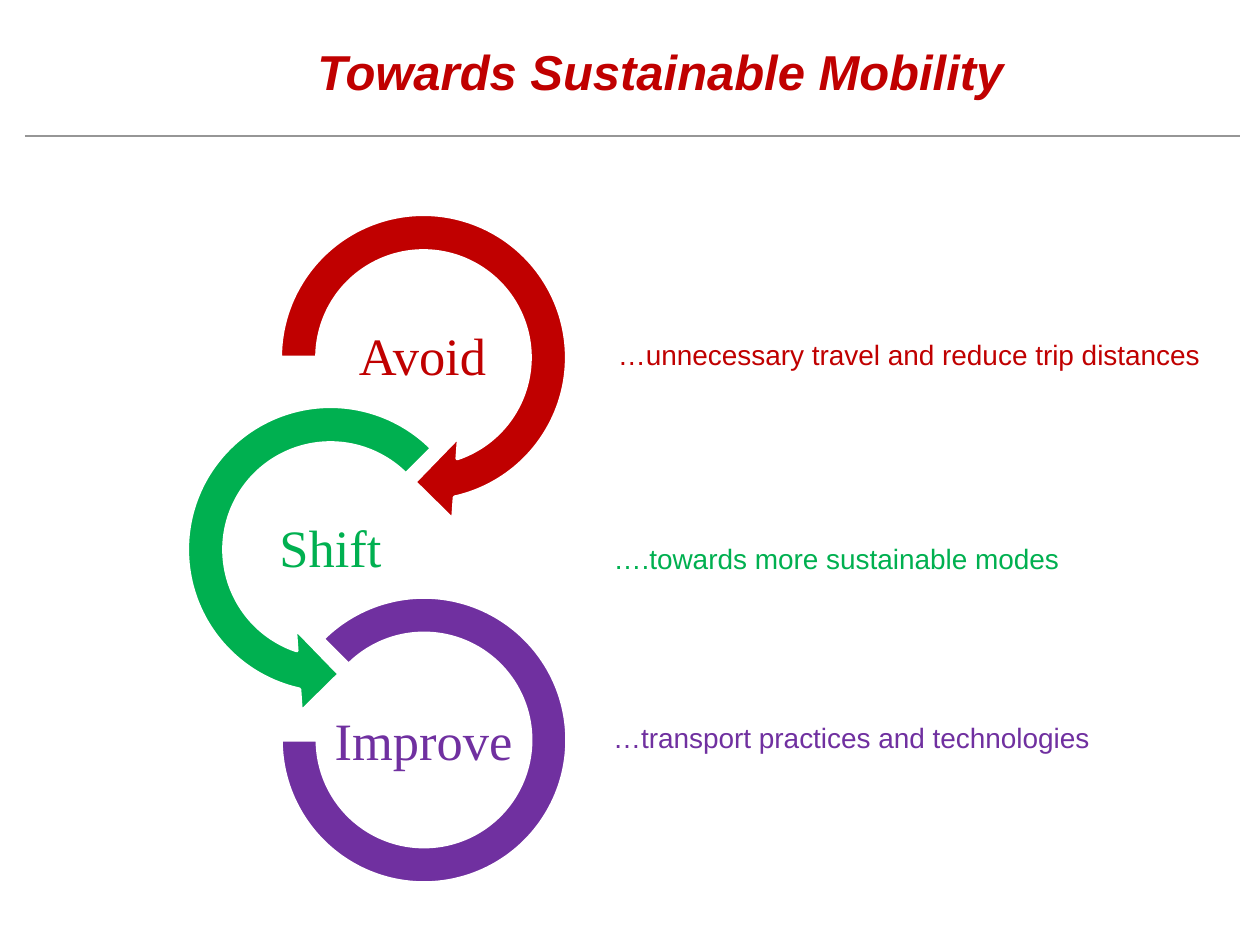
import pptx
import pptx.util
import pptx.dml.color
import pptx.enum.shapes
import pptx.enum.text
import pptx.oxml.ns
import lxml.etree

PX = 914400 / 126
SHAPE = pptx.enum.shapes.MSO_SHAPE
ALIGN = pptx.enum.text.PP_ALIGN
ANCHOR = pptx.enum.text.MSO_ANCHOR
RED, GREEN, VIOLET, WHITE = "C00000", "00B050", "7030A0", "FFFFFF"


def emu(*px):
    return [pptx.util.Emu(round(n * PX)) for n in px]


def color(code):
    return pptx.dml.color.RGBColor.from_string(code)


class Page:
    sans = "Arial"
    serif = "Times New Roman"

    def __init__(self, deck):
        self.slide = deck.slides.add_slide(deck.slide_layouts[6])
        self.shapes = self.slide.shapes

    def rule(self, left, right, y, code):
        line = self.shapes.add_connector(
            pptx.enum.shapes.MSO_CONNECTOR.STRAIGHT, *emu(left, y, right, y))
        line.line.color.rgb = color(code)
        line.line.width = pptx.util.Pt(0.75)
        lxml.etree.SubElement(line._element.spPr, pptx.oxml.ns.qn("a:effectLst"))

    def words(self, shape, text, face, size, code, align, anchor):
        frame = shape.text_frame
        frame.word_wrap = True
        frame.vertical_anchor = anchor
        para = frame.paragraphs[0]
        para.text = text
        para.alignment = align
        para.font.name = face
        para.font.size = pptx.util.Pt(size)
        para.font.color.rgb = color(code)
        return frame

    def title(self, box, text):
        shape = self.shapes.add_textbox(*emu(*box))
        frame = self.words(shape, text, self.sans, 28, RED, ALIGN.CENTER, ANCHOR.TOP)
        font = frame.paragraphs[0].font
        font.bold = font.italic = True

    def solid(self, kind, box, code):
        shape = self.shapes.add_shape(kind, *emu(*box))
        shape.shadow.inherit = False
        shape.fill.solid()
        shape.fill.fore_color.rgb = color(code)
        return shape

    def ring(self, kind, box, code, turns):
        shape = self.solid(kind, box, code)
        shape.line.color.rgb = color(WHITE)
        shape.line.width = pptx.util.Pt(2)
        for i, turn in enumerate(turns):
            shape.adjustments[i] = turn

    def label(self, left, top, text, code):
        shape = self.shapes.add_textbox(*emu(left, top, 185, 92))
        frame = self.words(shape, text, self.serif, 30, code, ALIGN.CENTER, ANCHOR.MIDDLE)
        frame.margin_left = frame.margin_right = pptx.util.Inches(0.02)
        frame.margin_top = frame.margin_bottom = pptx.util.Inches(0.02)
        frame.paragraphs[0].line_spacing = 0.9

    def note(self, top, high, inset, text, code, align):
        shape = self.solid(SHAPE.ROUNDED_RECTANGLE, (597, top, 624, high), WHITE)
        shape.line.fill.background()
        frame = self.words(shape, text, self.sans, 16, code, align, ANCHOR.TOP)
        frame.margin_top = emu(inset)[0]


def main():
    deck = pptx.Presentation()
    deck.slide_width, deck.slide_height = emu(1260, 945)
    page = Page(deck)
    page.rule(25, 1240, 136, "969696")
    page.title((174, 35, 973, 193), "Towards Sustainable Mobility")

    steps = [
        (SHAPE.CIRCULAR_ARROW, (257, 191, 333, 333), RED,
         (0.11, 11.42, 45, 108, 0.125), (330, 312, "Avoid")),
        (SHAPE.LEFT_CIRCULAR_ARROW, (164, 383, 333, 333), GREEN,
         (0.11, 11.42, 63, 189, 0.125), (238, 504, "Shift")),
        (SHAPE.BLOCK_ARC, (281, 597, 286, 286), VIOLET,
         (135, 108, 0.127), (331, 697, "Improve")),
    ]
    for kind, box, code, turns, (left, top, text) in steps:
        page.ring(kind, box, code, turns)
        page.label(left, top, text, code)

    notes = [
        (294, 105, 38, "…unnecessary travel and reduce trip distances", RED, ALIGN.CENTER),
        (499, 89, 38, "….towards more sustainable modes", GREEN, ALIGN.LEFT),
        (711, 79, 6, "…transport practices and technologies", VIOLET, ALIGN.LEFT),
    ]
    for note in notes:
        page.note(*note)
    deck.save("out.pptx")


if __name__ == "__main__":
    main()
